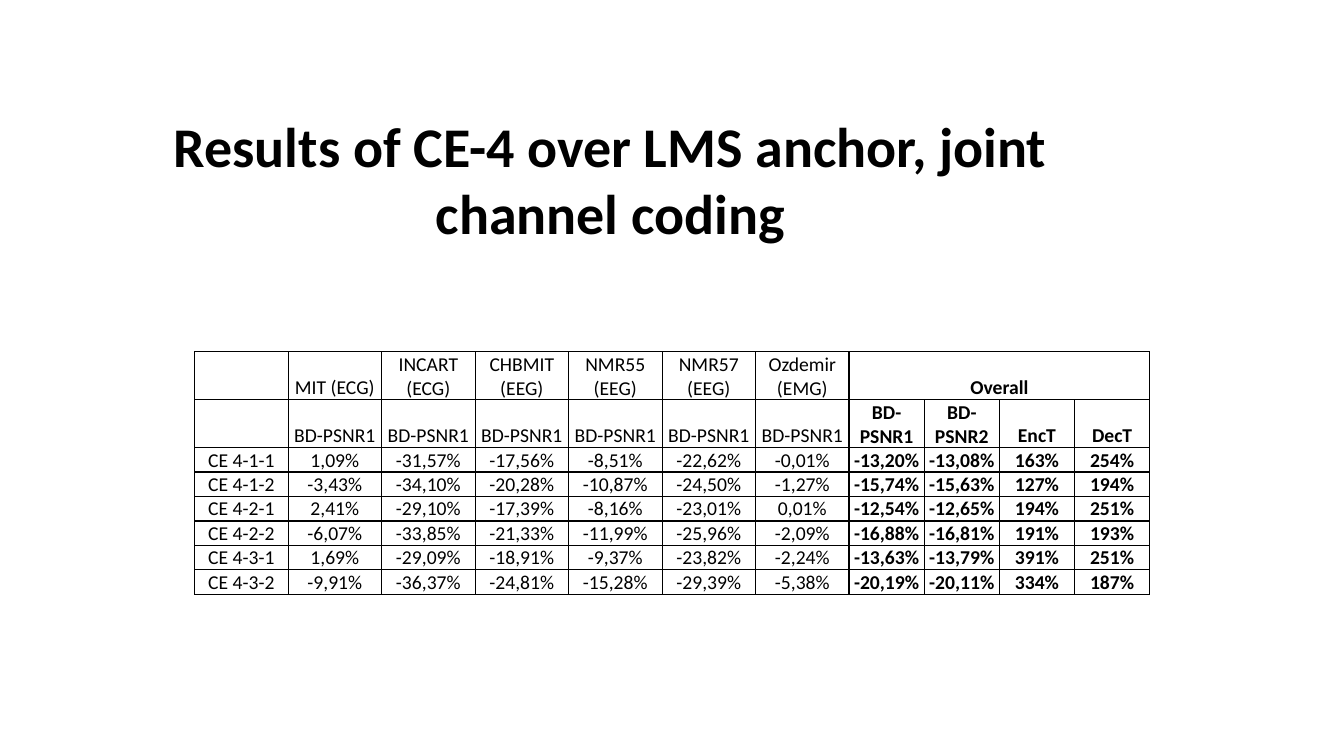
import dataclasses

import lxml.etree
import pptx
import pptx.dml.color
import pptx.enum.text
import pptx.oxml.ns
import pptx.util

Pt = pptx.util.Pt

TITLE = "Results of CE-4 over LMS anchor, joint channel coding"
DATASETS = ["MIT (ECG)", "INCART (ECG)", "CHBMIT (EEG)", "NMR55 (EEG)", "NMR57 (EEG)", "Ozdemir (EMG)"]
OVERALL = ["BD-PSNR1", "BD-PSNR2", "EncT", "DecT"]
RESULTS = [
    ("CE 4-1-1", "1,09%", "-31,57%", "-17,56%", "-8,51%", "-22,62%", "-0,01%", "-13,20%", "-13,08%", "163%", "254%"),
    ("CE 4-1-2", "-3,43%", "-34,10%", "-20,28%", "-10,87%", "-24,50%", "-1,27%", "-15,74%", "-15,63%", "127%", "194%"),
    ("CE 4-2-1", "2,41%", "-29,10%", "-17,39%", "-8,16%", "-23,01%", "0,01%", "-12,54%", "-12,65%", "194%", "251%"),
    ("CE 4-2-2", "-6,07%", "-33,85%", "-21,33%", "-11,99%", "-25,96%", "-2,09%", "-16,88%", "-16,81%", "191%", "193%"),
    ("CE 4-3-1", "1,69%", "-29,09%", "-18,91%", "-9,37%", "-23,82%", "-2,24%", "-13,63%", "-13,79%", "391%", "251%"),
    ("CE 4-3-2", "-9,91%", "-36,37%", "-24,81%", "-15,28%", "-29,39%", "-5,38%", "-20,19%", "-20,11%", "334%", "187%"),
]
ROWS = [
    ["", *DATASETS, "Overall", "", "", ""],
    ["", *["BD-PSNR1"] * len(DATASETS), *OVERALL],
    *RESULTS,
]
FIRST_OVERALL = 1 + len(DATASETS)

SLIDE_SIZE = (960, 540)
TITLE_BOX = (75.6, 75.6, 720.7, 104.4)
TABLE_LEFT, TABLE_TOP = 139, 251.3
COLUMN_WIDTHS = [66.8] * FIRST_OVERALL + [53.7] * len(OVERALL)
ROW_HEIGHT = 14.4
CELL_INSET = 0.6


@dataclasses.dataclass(frozen=True)
class Theme:
    font: str = "Calibri"
    ink: str = "000000"
    title_size: float = 40
    table_size: float = 14
    border_width: float = 1


THEME = Theme()


def add_text(para, text, size, bold):
    para.alignment = pptx.enum.text.PP_ALIGN.CENTER
    span = para.add_run()
    span.text = text
    span.font.name = THEME.font
    span.font.size = Pt(size)
    span.font.bold = bold
    span.font.color.rgb = pptx.dml.color.RGBColor.from_string(THEME.ink)


def add_borders(cell):
    """Outline the cell; borders must come before the fill in its properties."""
    qn = pptx.oxml.ns.qn
    properties = cell._tc.get_or_add_tcPr()
    for position, side in enumerate(("lnL", "lnR", "lnT", "lnB")):
        line = lxml.etree.Element(qn(f"a:{side}"), w=str(Pt(THEME.border_width)))
        fill = lxml.etree.SubElement(line, qn("a:solidFill"))
        lxml.etree.SubElement(fill, qn("a:srgbClr"), val=THEME.ink)
        properties.insert(position, line)


def add_title(page):
    box = page.shapes.title
    box.left, box.top, box.width, box.height = map(Pt, TITLE_BOX)
    box.text_frame.word_wrap = True
    box.text_frame.auto_size = pptx.enum.text.MSO_AUTO_SIZE.SHAPE_TO_FIT_TEXT
    add_text(box.text_frame.paragraphs[0], TITLE, THEME.title_size, True)


def add_results(page):
    frame = page.shapes.add_table(
        len(ROWS), len(COLUMN_WIDTHS), Pt(TABLE_LEFT), Pt(TABLE_TOP),
        Pt(sum(COLUMN_WIDTHS)), Pt(ROW_HEIGHT * len(ROWS)))
    table = frame.table
    table.first_row = table.horz_banding = False
    for column, width in zip(table.columns, COLUMN_WIDTHS):
        column.width = Pt(width)
    for row, texts in zip(table.rows, ROWS):
        row.height = Pt(ROW_HEIGHT)
        for index, (cell, text) in enumerate(zip(row.cells, texts)):
            cell.fill.background()
            add_borders(cell)
            cell.vertical_anchor = pptx.enum.text.MSO_ANCHOR.BOTTOM
            cell.margin_left = cell.margin_right = cell.margin_top = Pt(CELL_INSET)
            cell.margin_bottom = 0
            if text:
                add_text(cell.text_frame.paragraphs[0], text, THEME.table_size, index >= FIRST_OVERALL)
    table.cell(0, FIRST_OVERALL).merge(table.cell(0, len(COLUMN_WIDTHS) - 1))


def main():
    deck = pptx.Presentation()
    deck.slide_width, deck.slide_height = map(Pt, SLIDE_SIZE)
    page = deck.slides.add_slide(deck.slide_layouts.get_by_name("Title Only"))
    add_title(page)
    add_results(page)
    deck.save("out.pptx")


if __name__ == "__main__":
    main()
